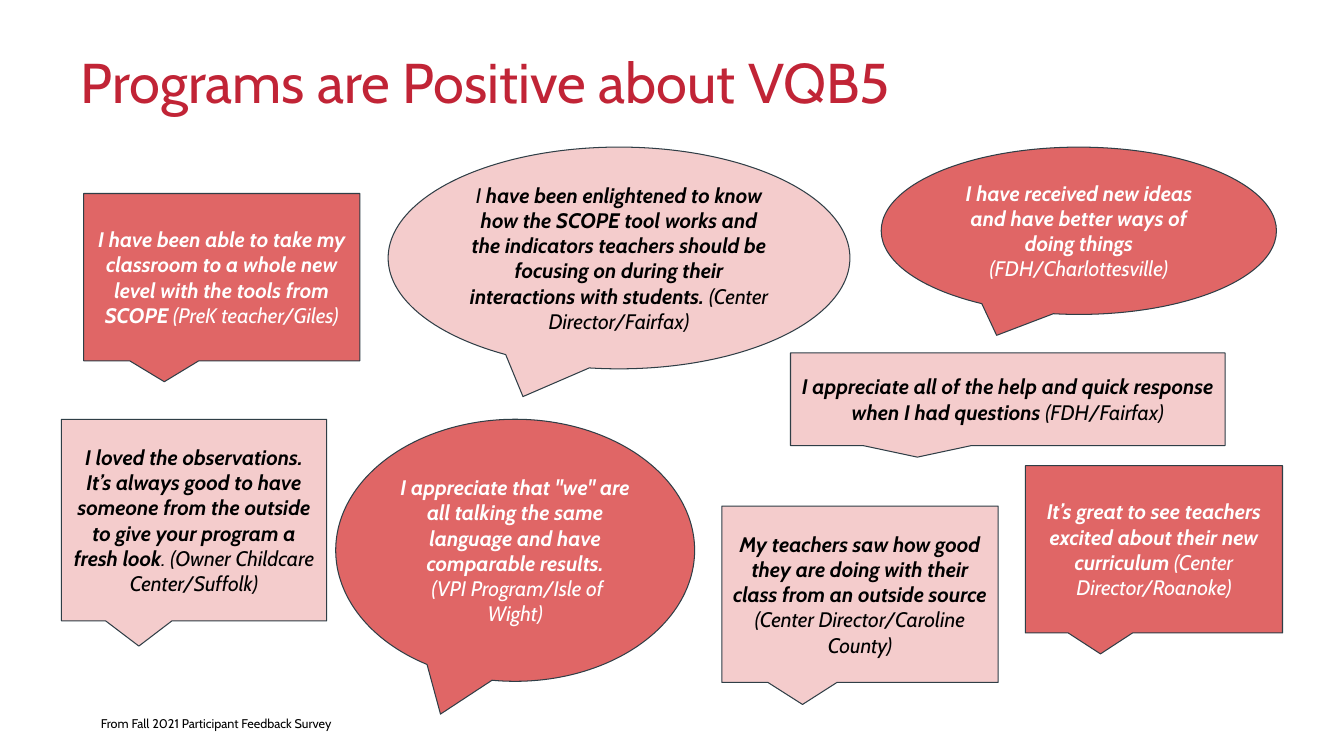
from pptx import Presentation
from pptx.dml.color import RGBColor
from pptx.enum.shapes import MSO_SHAPE as SHAPE
from pptx.enum.text import MSO_ANCHOR as ANCHOR, PP_ALIGN as ALIGN
from pptx.util import Inches, Pt

COLORS = {
    "title": "C12436",
    "rose": "E06666",
    "blush": "F4CCCC",
    "outline": "2F3E46",
    "white": "FFFFFF",
    "black": "000000",
}
TEXT_ON = {"rose": "white", "blush": "black"}
BOLD, PLAIN = True, False
TAIL = (-0.208, 0.625)
OUTLINES = {
    "rect": (SHAPE.RECTANGULAR_CALLOUT, TAIL),
    "square": (SHAPE.ROUNDED_RECTANGULAR_CALLOUT, (*TAIL, 0)),
    "oval": (SHAPE.OVAL_CALLOUT, TAIL),
}

# Outline, colour, box (left, top, width, height), paragraphs of (text, bold) runs
QUOTES = [
    ("rect", "rose", (0.83, 1.92, 2.74, 1.66), [[
        ("I have been able to take my classroom to a whole new level "
         "with the tools from SCOPE", BOLD),
        (" (PreK teacher/Giles)", PLAIN)]]),
    ("square", "rose", (10.17, 4.62, 2.55, 1.66), [[
        ("It’s great to see teachers excited about their new curriculum", BOLD),
        (" (Center Director/Roanoke)", PLAIN)]]),
    ("oval", "rose", (3.33, 4.16, 3.56, 2.6), [
        [('I appreciate that "we" are all talking the same language '
          "and have comparable results.", BOLD)],
        [(" ", BOLD), ("(VPI Program/Isle of Wight)", PLAIN)]]),
    ("rect", "blush", (0.61, 4.16, 2.63, 2), [[
        ("I loved the observations. It’s always good to have someone "
         "from the outside to give your program a fresh look", BOLD),
        (". (Owner Childcare Center/Suffolk)", PLAIN)]]),
    ("square", "blush", (7.84, 3.5, 4.31, 0.92), [[
        ("I appreciate all of the help and quick response "
         "when I had questions", BOLD),
        (" (FDH/Fairfax)", PLAIN)]]),
    ("oval", "blush", (3.85, 1.46, 4.58, 2.2), [[
        ("I", PLAIN),
        (" have been enlightened to know how the SCOPE tool works and the "
         "indicators teachers should be focusing on during their "
         "interactions with students. ", BOLD),
        ("(Center Director/Fairfax)", PLAIN)]]),
    ("oval", "rose", (8.74, 1.46, 3.92, 1.66), [[
        ("I have received new ideas and have better ways of doing things ", BOLD),
        ("(FDH/Charlottesville)", PLAIN)]]),
    ("square", "blush", (7.16, 5.02, 2.74, 1.75), [[
        ("My teachers saw how good they are doing with their class "
         "from an outside source", BOLD),
        (" (Center Director/Caroline County)", PLAIN)]]),
]


def rgb(name):
    return RGBColor.from_string(COLORS[name])


def set_attributes(target, values):
    for name, value in values.items():
        setattr(target, name, value)


def set_font(font, size, color, **style):
    set_attributes(font, {"name": "Cabin", "size": Pt(size), **style})
    font.color.rgb = rgb(color)


def set_frame(frame, anchor, across, down):
    """Wrap the text, with the given side and top/bottom insets in inches."""
    set_attributes(frame, {
        "word_wrap": True, "vertical_anchor": anchor,
        "margin_left": Inches(across), "margin_right": Inches(across),
        "margin_top": Inches(down), "margin_bottom": Inches(down),
    })


def add_title(slide, box, text):
    title = slide.shapes.title
    set_attributes(title, dict(zip(("left", "top", "width", "height"), map(Inches, box))))
    set_frame(title.text_frame, ANCHOR.MIDDLE, 0.1, 0.05)
    heading = title.text_frame.paragraphs[0]
    set_attributes(heading, {"alignment": ALIGN.LEFT, "line_spacing": 0.9})
    run = heading.add_run()
    run.text = text
    set_font(run.font, 40, "title")


def add_quote(slide, outline, color, box, paragraphs):
    preset, adjustments = OUTLINES[outline]
    bubble = slide.shapes.add_shape(preset, *map(Inches, box))
    bubble.shadow.inherit = False
    for index, value in enumerate(adjustments):
        bubble.adjustments[index] = value
    bubble.fill.solid()
    bubble.fill.fore_color.rgb = rgb(color)
    bubble.line.color.rgb = rgb("outline")
    bubble.line.width = Pt(0.75)

    frame = bubble.text_frame
    set_frame(frame, ANCHOR.MIDDLE, 0.1, 0.1)
    for index, runs in enumerate(paragraphs):
        paragraph = frame.add_paragraph() if index else frame.paragraphs[0]
        paragraph.alignment = ALIGN.CENTER
        for text, bold in runs:
            run = paragraph.add_run()
            run.text = text
            set_font(run.font, 15, TEXT_ON[color], bold=bold, italic=True)


def add_survey_note(slide, box, text):
    note = slide.shapes.add_textbox(*map(Inches, box))
    set_frame(note.text_frame, ANCHOR.TOP, 0.13, 0.13)
    run = note.text_frame.paragraphs[0].add_run()
    run.text = text
    set_font(run.font, 9, "black")


def main():
    deck = Presentation()
    deck.slide_width, deck.slide_height = Inches(13.33), Inches(7.5)
    title_only = deck.slide_layouts[5]
    slide = deck.slides.add_slide(title_only)
    add_title(slide, (0.7, 0.3, 11.94, 1.09), "Programs are Positive about VQB5")
    for quote in QUOTES:
        add_quote(slide, *quote)
    add_survey_note(slide, (0.87, 7.03, 3.06, 0.42),
                    "From Fall 2021 Participant Feedback Survey")
    deck.save("out.pptx")


if __name__ == "__main__":
    main()
